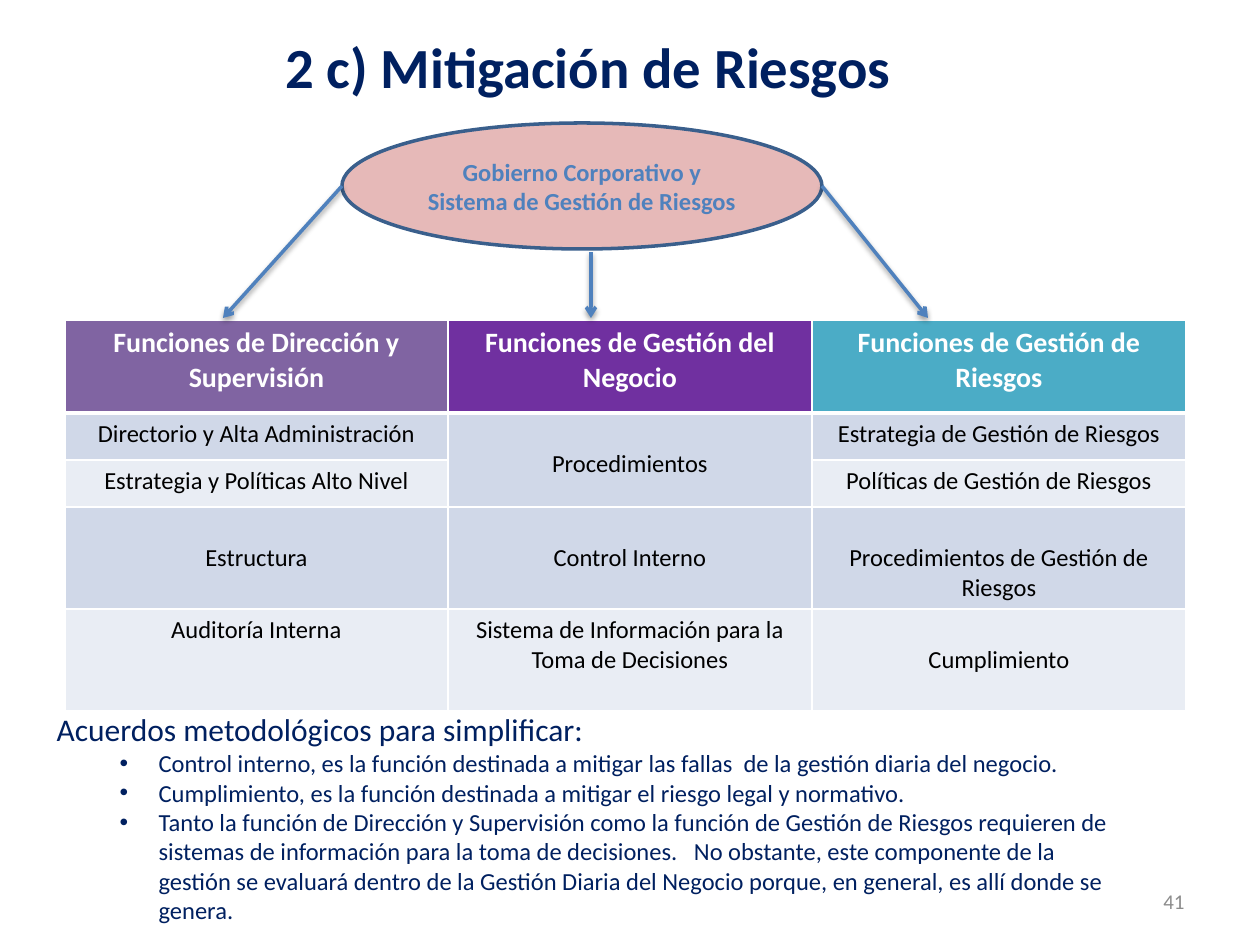
import pptx
import pptx.util
import pptx.dml.color
import pptx.enum.shapes
import pptx.enum.text
import pptx.oxml
import pptx.oxml.ns

ALIGN = pptx.enum.text.PP_ALIGN
ANCHOR = pptx.enum.text.MSO_ANCHOR
NAVY, BLUE, WHITE = "002060", "4F81BD", "FFFFFF"
NAMESPACE = pptx.oxml.ns.nsdecls("a")


def px(length):
    return round(length * 914400 / 126)


def color(value):
    return pptx.dml.color.RGBColor.from_string(value)


def assign(target, values):
    for name, value in values.items():
        setattr(target, name, value)


class SlideBuilder:
    font = "Calibri"
    line_width = pptx.util.Pt(2)

    def __init__(self, deck):
        self.page = deck.slides.add_slide(deck.slide_layouts[1])

    def place(self, shape, left, top, width, height):
        assign(shape, {"left": px(left), "top": px(top), "width": px(width), "height": px(height)})

    def add_text(self, para, text, size, ink, bold=False, align=ALIGN.LEFT):
        assign(para, {"alignment": align, "space_before": pptx.util.Pt(0)})
        span = para.add_run()
        span.text = text
        assign(span.font, {"name": self.font, "size": pptx.util.Pt(size), "bold": bold})
        span.font.color.rgb = color(ink)

    def frame(self, shape, anchor):
        box = shape.text_frame
        assign(box, {
            "word_wrap": True,
            "auto_size": pptx.enum.text.MSO_AUTO_SIZE.NONE,
            "vertical_anchor": anchor,
        })
        return box

    def title(self, area, text):
        shape = self.page.shapes.title
        self.place(shape, *area)
        box = self.frame(shape, ANCHOR.MIDDLE)
        self.add_text(box.paragraphs[0], text, 32.4, NAVY, True, ALIGN.CENTER)

    def body(self, area, heading, items):
        shape = self.page.placeholders[1]
        self.place(shape, *area)
        box = self.frame(shape, ANCHOR.TOP)
        para = box.paragraphs[0]
        self.add_text(para, heading, 18, NAVY)
        self.bullet(para, 0, 0, f"<a:buNone {NAMESPACE}/>")
        for item in items:
            para = box.add_paragraph()
            para.level = 1
            self.add_text(para, item, 14, NAVY)
            self.bullet(para, 102, -39,
                        f'<a:buFont {NAMESPACE} typeface="Arial"/>',
                        f'<a:buChar {NAMESPACE} char="•"/>')

    def bullet(self, para, margin, indent, *parts):
        properties = para._p.get_or_add_pPr()
        properties.set("marL", str(px(margin)))
        properties.set("indent", str(px(indent)))
        for part in parts:
            properties.append(pptx.oxml.parse_xml(part))

    def ellipse(self, area, text, fill, outline):
        shape = self.page.shapes.add_shape(
            pptx.enum.shapes.MSO_SHAPE.OVAL, *map(px, area))
        shape.shadow.inherit = False
        shape.fill.solid()
        shape.fill.fore_color.rgb = color(fill)
        shape.line.color.rgb = color(outline)
        shape.line.width = self.line_width
        box = self.frame(shape, ANCHOR.MIDDLE)
        self.add_text(box.paragraphs[0], text, 14, BLUE, True, ALIGN.CENTER)

    def arrow(self, start, end):
        connector = self.page.shapes.add_connector(
            pptx.enum.shapes.MSO_CONNECTOR.STRAIGHT, *map(px, start + end))
        connector.line.color.rgb = color(BLUE)
        connector.line.width = self.line_width
        connector.line._get_or_add_ln().append(
            pptx.oxml.parse_xml(f'<a:tailEnd {NAMESPACE} type="arrow"/>'))
        connector._element.spPr.append(pptx.oxml.parse_xml(
            f'<a:effectLst {NAMESPACE}><a:outerShdw blurRad="40000" dist="20000" '
            'dir="5400000" rotWithShape="0"><a:srgbClr val="000000">'
            '<a:alpha val="38000"/></a:srgbClr></a:outerShdw></a:effectLst>'))

    def borders(self, cell, top, bottom):
        properties = cell._tc.get_or_add_tcPr()
        widths = {"lnL": 1, "lnR": 1, "lnT": top, "lnB": bottom}
        for index, (side, width) in enumerate(widths.items()):
            properties.insert(index, pptx.oxml.parse_xml(
                f'<a:{side} {NAMESPACE} w="{int(pptx.util.Pt(width))}"><a:solidFill>'
                f'<a:srgbClr val="{WHITE}"/></a:solidFill></a:{side}>'))

    def table(self, left, top, columns, rows, texts, header_fills, band_fills, lowered):
        area = (left, top, sum(columns), sum(rows))
        grid = self.page.shapes.add_table(len(rows), len(columns), *map(px, area)).table
        for column, width in zip(grid.columns, columns):
            column.width = px(width)
        for row, height in zip(grid.rows, rows):
            row.height = px(height)
        grid.cell(1, 1).merge(grid.cell(2, 1))
        for r, line in enumerate(texts):
            for c, text in enumerate(line):
                cell = grid.cell(r, c)
                cell.fill.solid()
                cell.fill.fore_color.rgb = color(band_fills[r % 2] if r else header_fills[c])
                self.borders(cell, 3 if r == 1 else 1, 1 if r else 3)
                if (r, c) in lowered:
                    cell.margin_top = px(36)
                if text:
                    size, ink = (14, "000000") if r else (16, WHITE)
                    self.add_text(cell.text_frame.paragraphs[0], text, size, ink,
                                  r == 0, ALIGN.CENTER)

    def page_number(self, area, text):
        shape = self.page.shapes.add_textbox(*map(px, area))
        box = self.frame(shape, ANCHOR.MIDDLE)
        self.add_text(box.paragraphs[0], text, 12, "8C8C8C", align=ALIGN.RIGHT)


FUNCTIONS = [
    ["Funciones de Dirección y Supervisión", "Funciones de Gestión del Negocio",
     "Funciones de Gestión de Riesgos"],
    ["Directorio y Alta Administración", "Procedimientos", "Estrategia de Gestión de Riesgos"],
    ["Estrategia y Políticas Alto Nivel", "", "Políticas de Gestión de Riesgos"],
    ["Estructura", "Control Interno", "Procedimientos de Gestión de Riesgos"],
    ["Auditoría Interna", "Sistema de Información para la Toma de Decisiones", "Cumplimiento"],
]
AGREEMENTS = [
    "Control interno, es la función destinada a mitigar las fallas  de la gestión diaria del negocio.",
    "Cumplimiento, es la función destinada a mitigar el riesgo legal y normativo.",
    "Tanto la función de Dirección y Supervisión como la función de Gestión de Riesgos requieren de "
    "sistemas de información para la toma de decisiones.   No obstante, este componente de la "
    "gestión se evaluará dentro de la Gestión Diaria del Negocio porque, en general, es allí "
    "donde se genera.",
]


def main():
    deck = pptx.Presentation()
    assign(deck, {"slide_width": px(1260), "slide_height": px(945)})
    slide = SlideBuilder(deck)
    slide.title((63, 26, 1050, 80), "2 c) Mitigación de Riesgos")
    slide.table(65, 320, [383, 364, 374], [93, 47, 47, 102, 102], FUNCTIONS,
                ["8064A2", "7030A0", "4BACC6"], ["E9EDF4", "D0D8E8"],
                {(1, 1), (3, 0), (3, 1), (3, 2), (4, 2)})
    slide.ellipse((342, 123, 480, 126),
                  "Gobierno Corporativo y Sistema de Gestión de Riesgos", "E6B9B8", "3A5F8C")
    for start, end_x in [((342, 186), 223), ((822, 186), 928), ((591, 252), 591)]:
        slide.arrow(start, (end_x, 318))
    slide.body((44, 704, 1091, 229), "Acuerdos metodológicos para simplificar:", AGREEMENTS)
    slide.page_number((903, 876, 294, 50), "41")
    deck.save("out.pptx")


if __name__ == "__main__":
    main()
